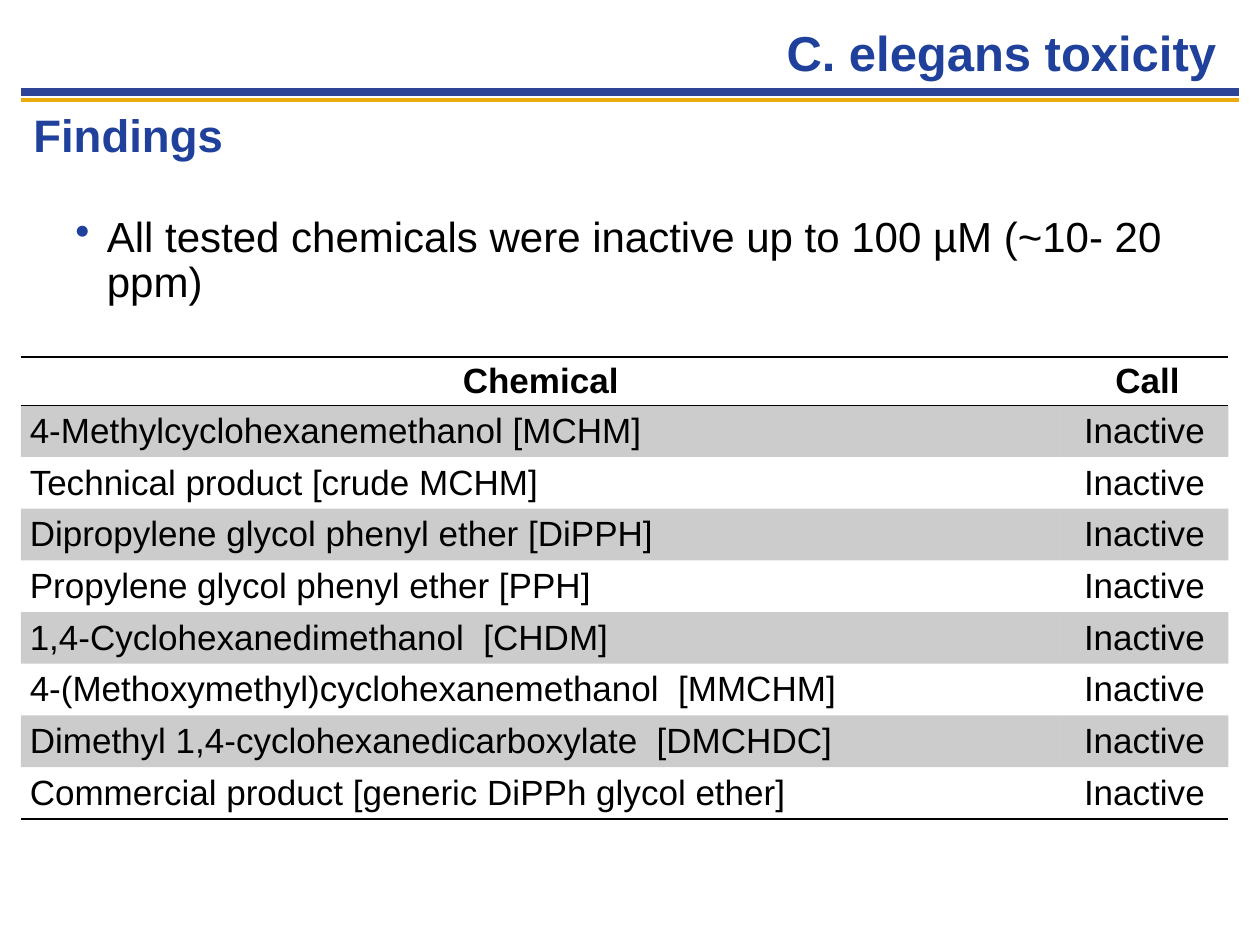
from lxml.etree import SubElement
from pptx import Presentation
from pptx.dml.color import RGBColor
from pptx.enum.shapes import MSO_CONNECTOR as Link
from pptx.enum.text import MSO_ANCHOR as Anchor, PP_ALIGN as Align
from pptx.oxml import parse_xml
from pptx.oxml.ns import nsdecls, qn
from pptx.util import Inches, Pt

BLUE = RGBColor(0x1F, 0x41, 0x9B)
NAVY = RGBColor(0x2E, 0x44, 0x96)
GOLD = RGBColor(0xEA, 0xAC, 0x0C)
BLACK = RGBColor(0, 0, 0)
PLAIN = "{2D5ABB26-0587-4C30-8999-92F81FD0307C}"  # table style without grid

CHEMICALS = [
    "4-Methylcyclohexanemethanol [MCHM]",
    "Technical product [crude MCHM]",
    "Dipropylene glycol phenyl ether [DiPPH]",
    "Propylene glycol phenyl ether [PPH]",
    "1,4-Cyclohexanedimethanol  [CHDM]",
    "4-(Methoxymethyl)cyclohexanemethanol  [MMCHM]",
    "Dimethyl 1,4-cyclohexanedicarboxylate  [DMCHDC]",
    "Commercial product [generic DiPPh glycol ether]",
]


def write(frame, text, size=20, color=BLACK, bold=False, align=Align.LEFT,
          space=1.0, left=0, first=0, bullet=None):
    """Fill the frame's first paragraph; left and first are indents in inches."""
    para = frame.paragraphs[0]
    para.alignment = align
    para.line_spacing = space
    props = para._p.get_or_add_pPr()
    props.set("marL", str(Inches(left)))
    props.set("indent", str(Inches(first)))
    if bullet:
        tint = SubElement(props, qn("a:buClr"))
        SubElement(tint, qn("a:srgbClr"), val=str(BLUE))
        SubElement(props, qn("a:buChar"), char=bullet)
    run = para.add_run()
    run.text = text
    font = run.font
    font.name, font.size, font.bold = "Arial", Pt(size), bold
    font.color.rgb = color


def rule(cell, side):
    """Draw a thin black border on the top (T) or bottom (B) of a cell."""
    props = cell._tc.get_or_add_tcPr()
    line = parse_xml(
        f'<a:ln{side} {nsdecls("a")} w="{Pt(1)}"><a:solidFill>'
        f'<a:srgbClr val="{BLACK}"/></a:solidFill></a:ln{side}>')
    props.insert(0, line)


def shade(cell, alpha):
    cell.fill.solid()
    cell.fill.fore_color.rgb = BLACK
    tint = cell._tc.tcPr.find(".//" + qn("a:srgbClr"))
    SubElement(tint, qn("a:alpha"), val=str(alpha * 1000))


class Page:
    """A slide on a grid of 60 columns by 45 rows."""

    def __init__(self, deck):
        self.slide = deck.slides.add_slide(deck.slide_layouts[6])
        self.unit = deck.slide_width / 60

    def grid(self, *marks):
        return [round(mark * self.unit) for mark in marks]

    def line(self, left, right, row, color, width):
        link = self.slide.shapes.add_connector(
            Link.STRAIGHT, *self.grid(left, row, right, row))
        link.line.color.rgb = color
        link.line.width = Pt(width)
        SubElement(link._element.spPr, qn("a:effectLst"))

    def text(self, box, text, anchor=Anchor.TOP, **style):
        frame = self.slide.shapes.add_textbox(*self.grid(*box)).text_frame
        frame.word_wrap = True
        frame.vertical_anchor = anchor
        write(frame, text, **style)

    def table(self, box, widths, head, data):
        rows = [head] + data
        shape = self.slide.shapes.add_table(
            len(rows), len(head), *self.grid(*box))
        table = shape.table
        table._tbl.tblPr.find(qn("a:tableStyleId")).text = PLAIN
        table.first_row = table.horz_banding = False
        for col, width in zip(table.columns, self.grid(*widths)):
            col.width = width
        top = 2.3
        rest = (box[3] - top) / len(data)
        heights = self.grid(top, *[rest] * len(data))
        for r, (row, height) in enumerate(zip(rows, heights)):
            table.rows[r].height = height
            for c, text in enumerate(row):
                self.cell(table.cell(r, c), text, r, c, r == len(data))

    def cell(self, cell, text, row, col, last):
        head = row == 0
        cell.margin_left = cell.margin_right = Inches(0.07)
        cell.margin_top = cell.margin_bottom = 0
        cell.vertical_anchor = Anchor.MIDDLE
        write(cell.text_frame, text, bold=head,
              align=Align.CENTER if head or col else Align.LEFT,
              left=0.05 if head and col else 0)
        if row % 2:
            shade(cell, 20)
        else:
            cell.fill.background()
        if head or last:
            rule(cell, "B")
        if head:
            rule(cell, "T")


def main():
    deck = Presentation()
    deck.slide_width, deck.slide_height = Inches(10), Inches(7.5)
    page = Page(deck)
    page.line(1, 59, 4.75, GOLD, 2.25)
    page.line(1, 59, 4.38, NAVY, 4.5)
    page.text((3, 10, 54, 31.5),
              "All tested chemicals were inactive up to 100 µM (~10- 20 ppm)",
              size=24, space=0.9, left=0.25, first=-0.25, bullet="•")
    page.text((1, 5.1, 53.5, 2.5), "Findings", size=26, color=BLUE,
              bold=True, space=0.9, left=0.25, first=-0.25)
    page.text((8.5, 0, 50, 4.15), "C. elegans toxicity", Anchor.BOTTOM,
              size=28, color=BLUE, bold=True, align=Align.RIGHT)
    page.table((1, 17, 57.5, 22), (49.5, 8), ("Chemical", "Call"),
               [(name, "Inactive") for name in CHEMICALS])
    deck.save("out.pptx")


if __name__ == "__main__":
    main()
